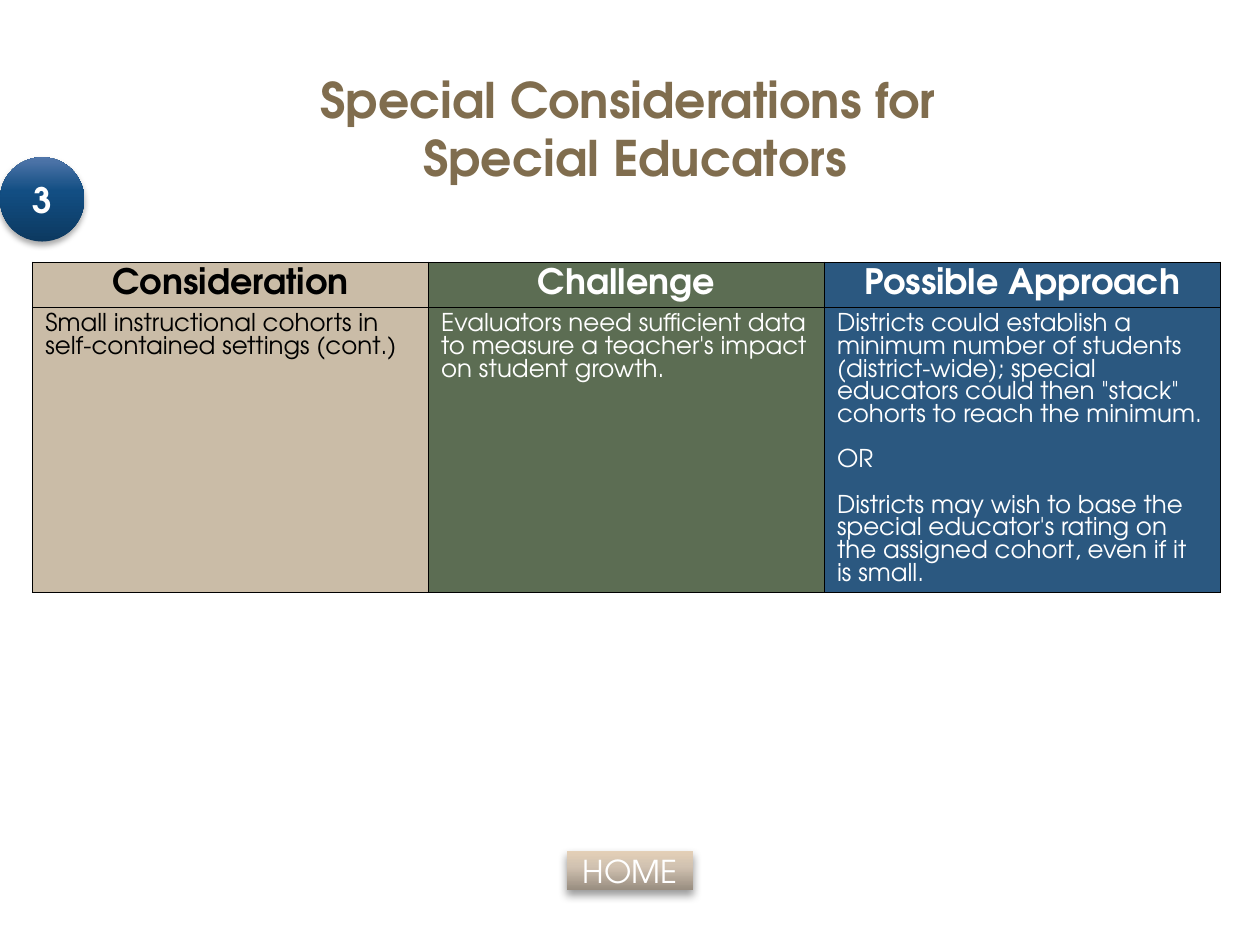
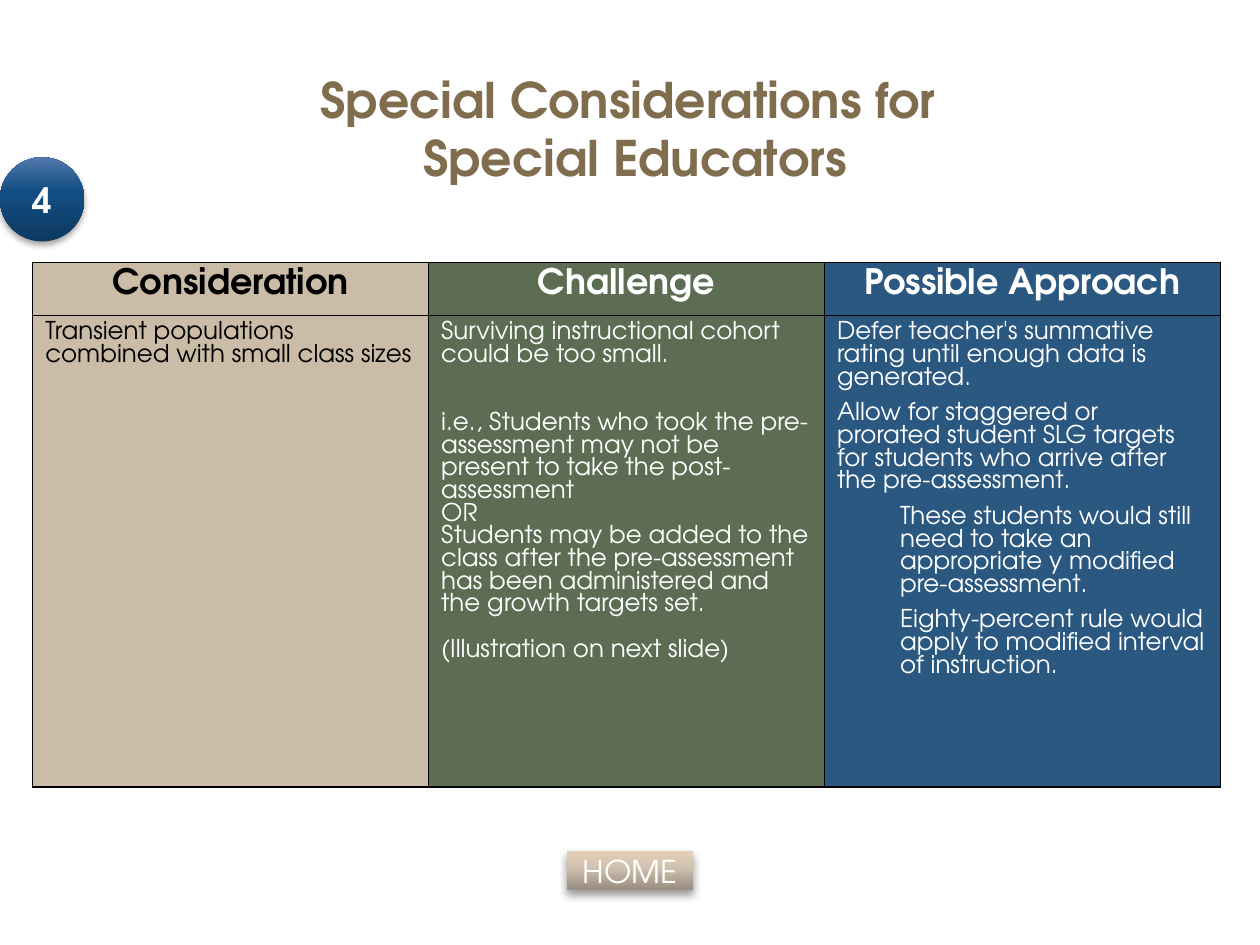
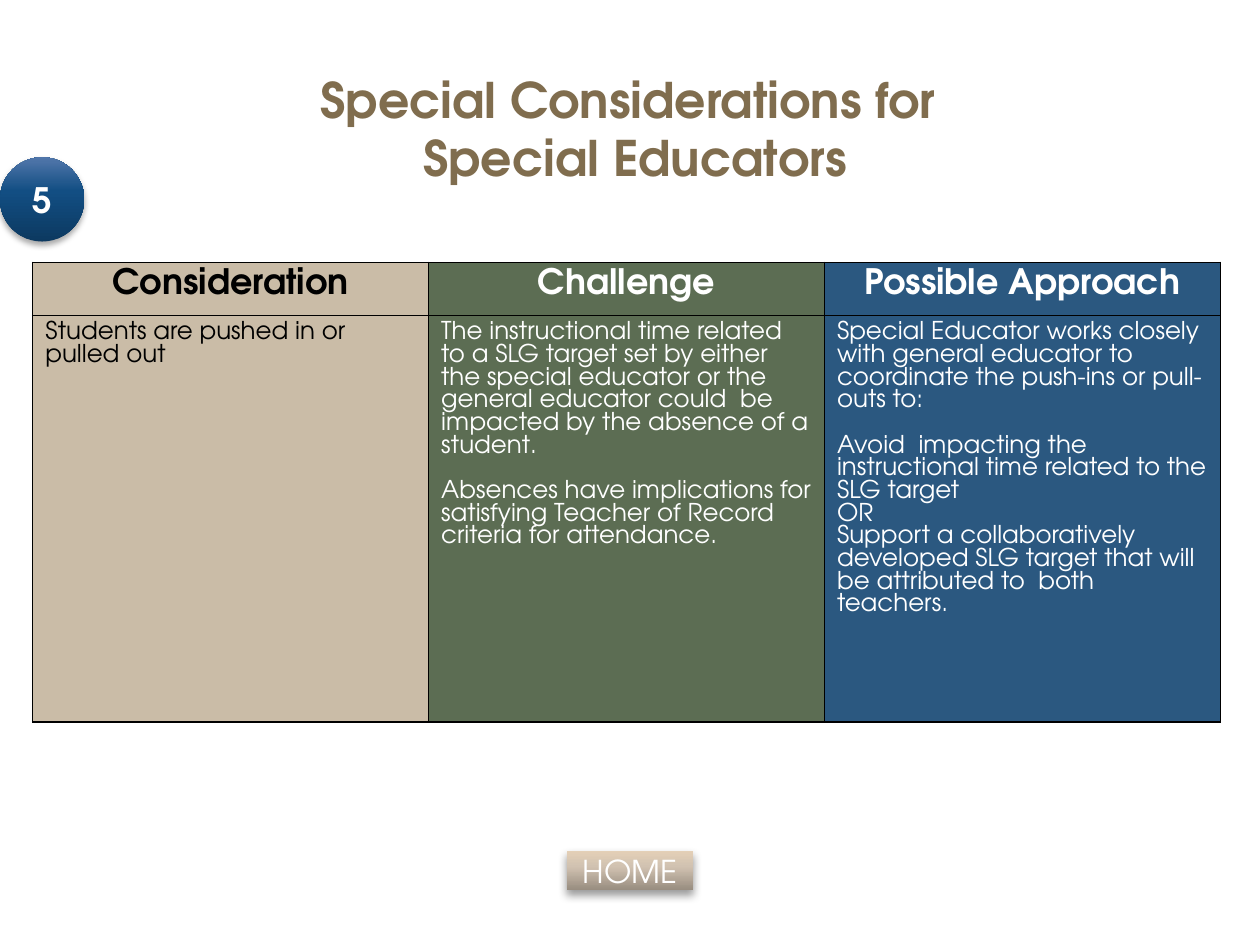
from collections import namedtuple
from copy import deepcopy

from lxml.etree import SubElement
from pptx import Presentation
from pptx.dml.color import RGBColor
from pptx.enum.shapes import MSO_SHAPE as Shape
from pptx.enum.text import MSO_ANCHOR as Anchor, MSO_AUTO_SIZE as AutoSize, PP_ALIGN as Align
from pptx.oxml.ns import qn
from pptx.util import Cm, Pt

FONT = "TeX Gyre Adventor"
BLACK = RGBColor(0x00, 0x00, 0x00)
WHITE = RGBColor(0xFF, 0xFF, 0xFF)
BRONZE = RGBColor(0x80, 0x6D, 0x4E)
SAND = RGBColor(0xCA, 0xBC, 0xA7)
GREEN = RGBColor(0x5C, 0x6D, 0x53)
BLUE = RGBColor(0x2B, 0x58, 0x80)
BADGE_STOPS = (
    (0, RGBColor(0x0C, 0x39, 0x60)),
    (0.6, RGBColor(0x12, 0x4E, 0x83)),
    (1, RGBColor(0x52, 0x77, 0xAB)),
)
HOME_STOPS = (
    (0, RGBColor(0x97, 0x8C, 0x7F)),
    (0.6, RGBColor(0xD1, 0xC2, 0xB1)),
    (1, RGBColor(0xE4, 0xD0, 0xB7)),
)

TITLE = "Special Considerations for\v Special Educators"
COLUMNS = (
    ("Consideration", SAND, BLACK),
    ("Challenge", GREEN, WHITE),
    ("Possible Approach", BLUE, WHITE),
)
COLUMN_WIDTH = Cm(7.98)
BODY_LINE = 12.95
HALF_LINE = 0.57

Para = namedtuple("Para", "text gap indent", defaults=(0, 0))

SLIDES = (
    (3, 0.91, 5.74, (
        [Para("Small instructional cohorts in self-contained settings (cont.)")],
        [Para("Evaluators need sufficient data to measure a teacher's impact on student growth.")],
        [
            Para("Districts could establish a minimum number of students (district-wide); "
                 "special educators could then \"stack\" cohorts to reach the minimum."),
            Para("OR", gap=1),
            Para("Districts may wish to base the special educator's rating on the assigned "
                 "cohort, even if it is small.", gap=1),
        ],
    )),
    (4, 1.07, 9.5, (
        [Para("Transient populations combined with small class sizes")],
        [
            Para("Surviving instructional cohort could be too small."),
            Para("i.e., Students who took the pre-assessment may not be present to take the "
                 "post-assessment", gap=2),
            Para("OR"),
            Para("Students may be added to the class after the pre-assessment has been "
                 "administered and the growth targets set."),
            Para("(Illustration on next slide)", gap=1),
        ],
        [
            Para("Defer teacher's summative rating until enough data is generated."),
            Para("Allow for staggered or prorated student SLG targets for students who "
                 "arrive after the pre-assessment.", gap=HALF_LINE),
            Para("These students would still need to take an appropriate y modified "
                 "pre-assessment.", gap=HALF_LINE, indent=1.27),
            Para("Eighty-percent rule would apply to modified interval of instruction.",
                 gap=HALF_LINE, indent=1.27),
        ],
    )),
    (5, 1.07, 8.2, (
        [Para("Students are pushed in or pulled out")],
        [
            Para("The instructional time related to a SLG target set by either the special "
                 "educator or the general educator could  be impacted by the absence of a student."),
            Para("Absences have implications for satisfying Teacher of Record criteria for "
                 "attendance.", gap=1),
        ],
        [
            Para("Special Educator works closely with general educator to coordinate the "
                 "push-ins or pull-outs to:"),
            Para("Avoid  impacting the instructional time related to the SLG target", gap=1),
            Para("OR"),
            Para("Support a collaboratively developed SLG target that will be attributed to  "
                 "both teachers."),
        ],
    )),
)


def write(frame, paras, size=14, color=WHITE, bold=False, align=Align.LEFT, line=None):
    for index, para in enumerate(paras):
        paragraph = frame.paragraphs[0] if index == 0 else frame.add_paragraph()
        paragraph.text = para.text
        paragraph.alignment = align
        paragraph.space_before = Pt(para.gap * BODY_LINE)
        paragraph.space_after = Pt(0)
        if line:
            paragraph.line_spacing = Pt(line)
        if para.indent:
            paragraph._p.get_or_add_pPr().set("marL", str(Cm(para.indent)))
        for run in paragraph.runs:
            font = run.font
            font.name, font.size, font.bold = FONT, Pt(size), bold
            font.color.rgb = color


class Deck:
    def __init__(self):
        self.prs = Presentation()
        self.prs.slide_width, self.prs.slide_height = Cm(25.4), Cm(19.05)
        self.slide = None

    def add_slide(self):
        self.slide = self.prs.slides.add_slide(self.prs.slide_layouts[5])

    def title(self, text):
        title = self.slide.shapes.title
        title.left, title.top, title.width, title.height = Cm(1.19), Cm(1.14), Cm(22.94), Cm(2.9)
        title.text_frame.auto_size = AutoSize.NONE
        title.text_frame.vertical_anchor = Anchor.MIDDLE
        write(title.text_frame, [Para(text)], size=28, color=BRONZE, bold=True,
              align=Align.CENTER, line=33.1)

    def cell(self, cell, paras, fill, **style):
        cell.fill.solid()
        cell.fill.fore_color.rgb = fill
        write(cell.text_frame, paras, **style)
        properties = cell._tc.get_or_add_tcPr()
        for position, side in enumerate(("a:lnL", "a:lnR", "a:lnT", "a:lnB")):
            border = SubElement(properties, qn(side), w=str(Pt(1)))
            solid = SubElement(border, qn("a:solidFill"))
            SubElement(solid, qn("a:srgbClr"), val=str(BLACK))
            properties.insert(position, border)

    def table(self, header_height, body_height, answers):
        heights = Cm(header_height), Cm(body_height)
        table = self.slide.shapes.add_table(
            2, len(COLUMNS), Cm(0.66), Cm(5.29), COLUMN_WIDTH * len(COLUMNS), sum(heights)).table
        for row, height in zip(table.rows, heights):
            row.height = height
        for index, ((heading, fill, color), answer) in enumerate(zip(COLUMNS, answers)):
            table.columns[index].width = COLUMN_WIDTH
            self.cell(table.cell(0, index), [Para(heading)], fill, size=20, color=color,
                      bold=True, align=Align.CENTER, line=18.5)
            self.cell(table.cell(1, index), answer, fill, color=color, line=BODY_LINE)

    def button(self, kind, box, text, stops, shadow, **style):
        button = self.slide.shapes.add_shape(kind, *(Cm(length) for length in box))
        button.line.fill.background()
        button.fill.gradient()
        button.fill.gradient_angle = 90
        properties = button._element.spPr
        stop_list = properties.find(".//" + qn("a:gsLst"))
        stop_list.append(deepcopy(stop_list[-1]))
        for stop, (position, color) in zip(button.fill.gradient_stops, stops):
            stop.position = position
            stop.color.rgb = color
        button.shadow.inherit = False
        opacity, blur, distance = shadow
        outer = SubElement(properties.find(qn("a:effectLst")), qn("a:outerShdw"),
                           blurRad=str(Pt(blur)), dist=str(Pt(distance)),
                           dir="5400000", rotWithShape="0")
        tint = SubElement(outer, qn("a:srgbClr"), val=str(BLACK))
        SubElement(tint, qn("a:alpha"), val=str(opacity * 1000))
        button.text_frame.word_wrap = False
        button.text_frame.vertical_anchor = Anchor.MIDDLE
        write(button.text_frame, [Para(text)], align=Align.CENTER, **style)

    def badge(self, number):
        self.button(Shape.OVAL, (0, 3.17, 1.7, 1.7), str(number), BADGE_STOPS,
                    (32, 3.5, 2.2), size=20, bold=True)

    def home(self):
        self.button(Shape.ACTION_BUTTON_CUSTOM, (11.43, 17.15, 2.54, 0.8), "HOME", HOME_STOPS,
                    (40, 5.2, 3), size=18)


def main():
    deck = Deck()
    for number, header_height, body_height, answers in SLIDES:
        deck.add_slide()
        deck.title(TITLE)
        deck.table(header_height, body_height, answers)
        deck.badge(number)
        deck.home()
    deck.prs.save("out.pptx")


if __name__ == "__main__":
    main()
